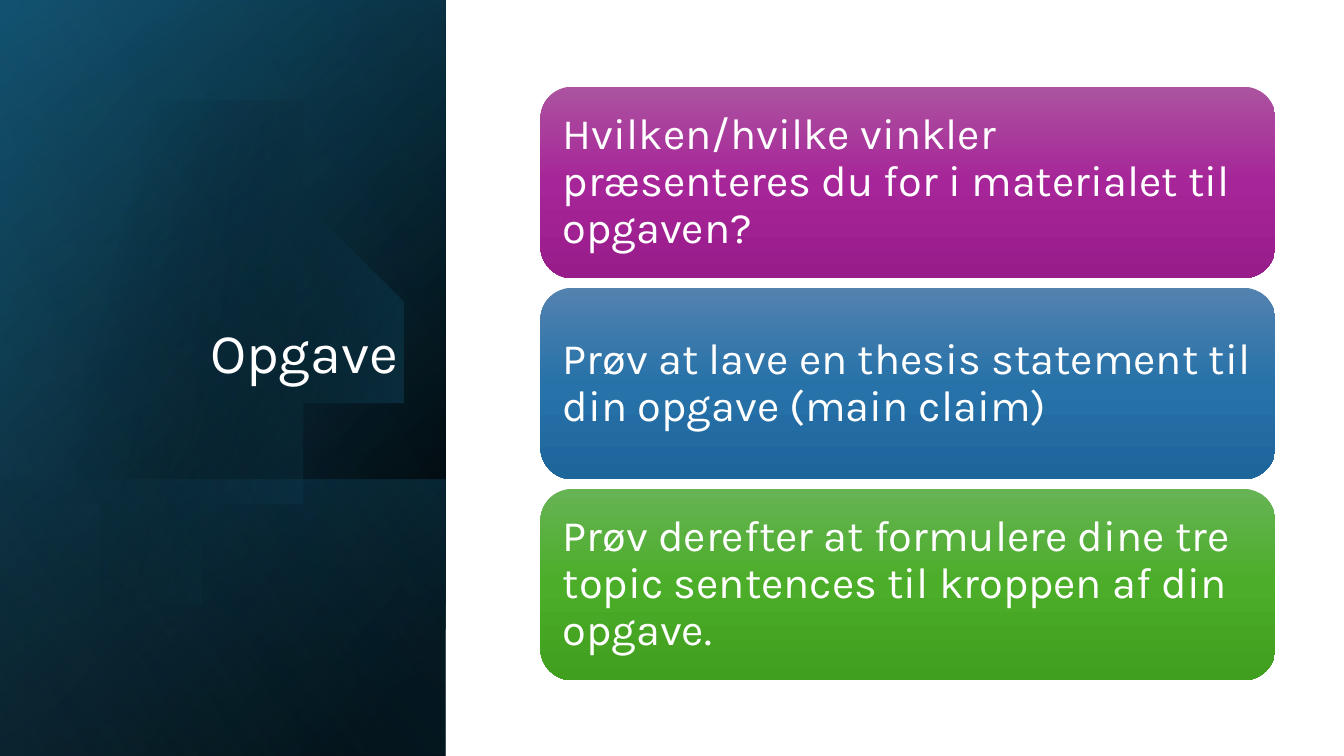
from dataclasses import dataclass

from lxml import etree
from pptx import Presentation
from pptx import util as u
from pptx.enum import shapes, text
from pptx.dml.color import RGBColor
from pptx.oxml.ns import qn

FONT = "Karla"
COLORS = {
    "white": "FFFFFF", "black": "000000", "navy": "104862",
    "teal": "156082", "sky": "46B1E1",
    "purple_top": "AC53A0", "purple_mid": "A62598", "purple_end": "991C8B",
    "blue_top": "5382AF", "blue_mid": "2772A9", "blue_end": "1D669C",
    "green_top": "66B354", "green_mid": "4BAD28", "green_end": "409F1E",
}
Point = tuple[float, float]


@dataclass
class Stop:
    position: int
    color: str
    opacity: int = 100


@dataclass
class Panel:
    box: tuple[float, float, float, float]
    stops: list[Stop]
    angle: float


@dataclass
class Card:
    hue: str
    wording: str


FULL = (-1.54, 1.54, 7.5, 4.42)
BACK_PANELS = [
    Panel(FULL, [Stop(8, "black"), Stop(100, "navy")], 50),
    Panel(FULL, [Stop(0, "black", 0), Stop(99, "teal", 46)], 30),
    Panel((0.84, 3.92, 2.74, 4.42),
          [Stop(2, "teal", 29), Stop(100, "black", 30)], 130),
]
FRONT_PANEL = Panel(FULL, [Stop(0, "black", 0), Stop(99, "sky", 11)], 120)
DISC_STOPS = [Stop(29, "black", 0), Stop(100, "teal", 43)]
DISC_START = (1.49, 1.1)
DISC_SEGMENTS = [
    [(2.46, 1.12), (3.35, 1.77), (3.63, 2.75)],
    [(3.98, 3.97), (3.28, 5.23), (2.07, 5.58)],
    [(1.31, 5.8), (0.53, 5.61), (-0.03, 5.14)],
    [(-0.15, 5.03)],
    [(-0.15, 1.75)],
    [(0, 1.61)],
    [(0.23, 1.42), (0.5, 1.28), (0.8, 1.19)],
    [(1.03, 1.13), (1.26, 1.1), (1.49, 1.1)],
]
CARDS = [
    Card("purple", "Hvilken/hvilke vinkler præsenteres du for i materialet til opgaven?"),
    Card("blue", "Prøv at lave en thesis statement til din opgave (main claim)"),
    Card("green", "Prøv derefter at formulere dine tre topic sentences til kroppen af din opgave."),
]
CARD_TOP, CARD_PITCH = 0.86, 3.99 / 2


def paint(sp, stops: list[Stop], angle: float) -> None:
    sp.shadow.inherit = False
    sp.line.fill.background()
    sp.fill.gradient()
    grad = sp._element.spPr.find(qn("a:gradFill"))
    stop_list = grad.find(qn("a:gsLst"))
    for old in list(stop_list):
        stop_list.remove(old)
    for stop in stops:
        gs = etree.SubElement(stop_list, qn("a:gs"), pos=str(stop.position * 1000))
        clr = etree.SubElement(gs, qn("a:srgbClr"), val=COLORS[stop.color])
        if stop.opacity < 100:
            etree.SubElement(clr, qn("a:alpha"), val=str(stop.opacity * 1000))
    grad.find(qn("a:lin")).set("ang", str(round(angle * 60000)))


def add_panel(slide, panel: Panel) -> None:
    sp = slide.shapes.add_shape(shapes.MSO_SHAPE.RECTANGLE, *map(u.Inches, panel.box))
    sp.rotation = 90
    sp._element.spPr.find(qn("a:xfrm")).set("flipH", "1")
    paint(sp, panel.stops, panel.angle)


def curve(start: Point, a: Point, b: Point, end: Point, steps: int = 16) -> list[Point]:
    points = []
    for i in range(1, steps + 1):
        t = i / steps
        weights = ((1 - t) ** 3, 3 * t * (1 - t) ** 2, 3 * t * t * (1 - t), t ** 3)
        points.append(tuple(sum(w * p[axis] for w, p in zip(weights, (start, a, b, end)))
                            for axis in (0, 1)))
    return points


def add_disc(slide) -> None:
    outline = [DISC_START]
    for segment in DISC_SEGMENTS:
        outline += curve(outline[-1], *segment) if len(segment) == 3 else segment
    builder = slide.shapes.build_freeform(*DISC_START, scale=u.Inches(1))
    builder.add_line_segments(outline[1:], close=True)
    paint(builder.convert_to_shape(), DISC_STOPS, 14)


def write(tf, wording: str, size: int, align) -> None:
    tf.word_wrap = True
    tf.auto_size = text.MSO_AUTO_SIZE.NONE
    tf.text = wording
    p = tf.paragraphs[0]
    p.alignment = align
    p.line_spacing = 0.9
    p.font.name = FONT
    p.font.size = u.Pt(size)
    p.font.color.rgb = RGBColor.from_string(COLORS["white"])


def add_title(slide) -> None:
    title = slide.shapes.title
    slide.shapes._spTree.append(title._element)
    title.left, title.top, title.width, title.height = map(u.Inches, (0.64, 1.84, 3.41, 2.62))
    tf = title.text_frame
    tf.vertical_anchor = text.MSO_ANCHOR.BOTTOM
    tf.margin_bottom = u.Inches(0.63)
    write(tf, "Opgave", 40, text.PP_ALIGN.RIGHT)


def add_card(slide, card: Card, top: float) -> None:
    sp = slide.shapes.add_shape(shapes.MSO_SHAPE.ROUNDED_RECTANGLE,
                                *map(u.Inches, (5.36, top, 7.29, 1.9)))
    paint(sp, [Stop(0, f"{card.hue}_top"), Stop(50, f"{card.hue}_mid"),
               Stop(100, f"{card.hue}_end")], 90)
    tf = sp.text_frame
    tf.vertical_anchor = text.MSO_ANCHOR.MIDDLE
    tf.margin_left = tf.margin_right = tf.margin_top = tf.margin_bottom = u.Inches(0.13)
    write(tf, card.wording, 31, text.PP_ALIGN.LEFT)


def main() -> None:
    prs = Presentation()
    prs.slide_width, prs.slide_height = u.Inches(13.33), u.Inches(7.5)
    slide = prs.slides.add_slide(prs.slide_layouts[5])
    for panel in BACK_PANELS:
        add_panel(slide, panel)
    add_disc(slide)
    add_panel(slide, FRONT_PANEL)
    add_title(slide)
    for i, card in enumerate(CARDS):
        add_card(slide, card, CARD_TOP + i * CARD_PITCH)
    prs.save("out.pptx")


if __name__ == "__main__":
    main()
